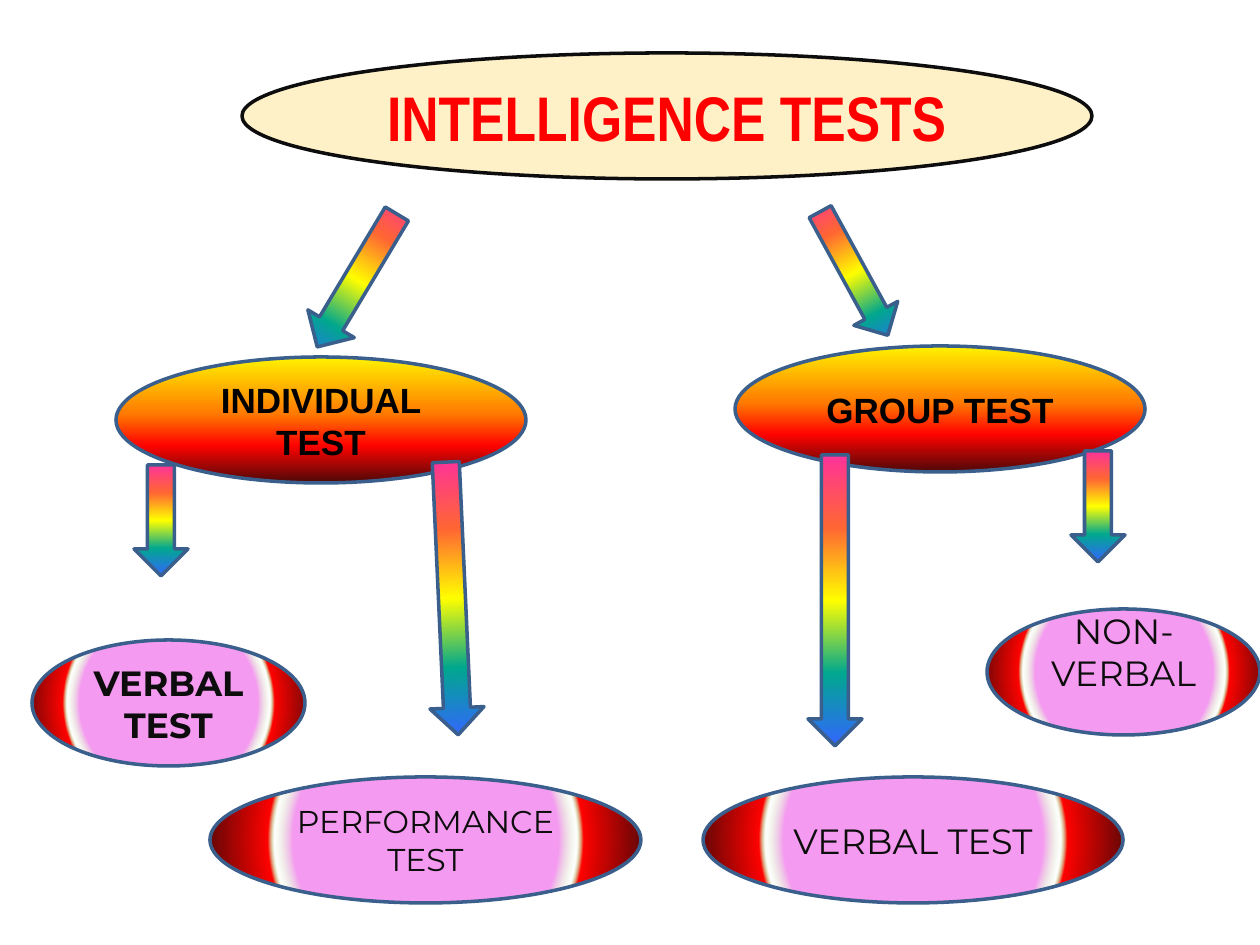
from lxml.etree import SubElement
from pptx import Presentation
from pptx.dml.color import RGBColor
from pptx.enum.shapes import MSO_SHAPE
from pptx.enum.text import MSO_ANCHOR, MSO_AUTO_SIZE, PP_ALIGN
from pptx.oxml.ns import qn
from pptx.util import Emu, Pt

SCALE = 914400 / 126  # EMU per px

CREAM = RGBColor(0xFF, 0xC0, 0x00)
RED = RGBColor(0xFF, 0x00, 0x00)
BLACK = RGBColor(0x00, 0x00, 0x00)
INK = RGBColor(0x0D, 0x0D, 0x0D)
OUTLINE = RGBColor(0x3A, 0x5F, 0x8C)
YELLOW = RGBColor(0xFF, 0xF2, 0x00)
ORANGE = RGBColor(0xFF, 0x7A, 0x00)
SCARLET = RGBColor(0xFF, 0x03, 0x00)
MAROON = RGBColor(0x4D, 0x08, 0x08)
ORCHID = RGBColor(0xE9, 0x17, 0xDF)
LIME = RGBColor(0x92, 0xD0, 0x50)

# Gradient stops: position %, colour, opacity %
FIRE = [(0, YELLOW, 100), (45, ORANGE, 100), (70, SCARLET, 100), (100, MAROON, 100)]
PETAL = [(59, ORCHID, 43), (59, ORCHID, 43), (67, LIME, 0),
         (70, SCARLET, 100), (100, MAROON, 100)]
RAINBOW = [(0, RGBColor(0xFF, 0x33, 0x99), 100), (25, RGBColor(0xFF, 0x66, 0x33), 100),
           (50, RGBColor(0xFF, 0xFF, 0x00), 100), (75, RGBColor(0x01, 0xA7, 0x8F), 100),
           (100, RGBColor(0x33, 0x66, 0xFF), 100)]


def px(n):
    return Emu(round(n * SCALE))


def set_opacity(color_el, percent):
    if percent < 100:
        SubElement(color_el, qn("a:alpha"), val=str(percent * 1000))


def set_gradient(sp, stops, radial=False):
    sp.fill.gradient()
    grad = sp._element.spPr.find(qn("a:gradFill"))
    for child in list(grad):
        grad.remove(child)
    grad.set("rotWithShape", "1")
    gs_list = SubElement(grad, qn("a:gsLst"))
    for pos, color, opacity in stops:
        gs = SubElement(gs_list, qn("a:gs"), pos=str(pos * 1000))
        set_opacity(SubElement(gs, qn("a:srgbClr"), val=str(color)), opacity)
    if radial:
        route = SubElement(grad, qn("a:path"), {"path": "circle"})
        SubElement(route, qn("a:fillToRect"), {side: "50000" for side in "ltrb"})
    else:
        SubElement(grad, qn("a:lin"), ang="5400000", scaled="0")


def set_text(sp, text, font="Montserrat", size=20, color=INK, bold=False, lift=0):
    """Centre text in a shape; lift moves it up by that many px."""
    tf = sp.text_frame
    tf.word_wrap = True
    tf.auto_size = MSO_AUTO_SIZE.NONE
    tf.vertical_anchor = MSO_ANCHOR.MIDDLE
    tf.margin_bottom = px(6 + 2 * lift)
    p = tf.paragraphs[0]
    p.alignment = PP_ALIGN.CENTER
    r = p.add_run()
    r.text = text
    r.font.name = font
    r.font.size = Pt(size)
    r.font.bold = bold
    r.font.color.rgb = color


class Diagram:
    line_width = Pt(2)
    height = 126  # every ellipse, px

    def __init__(self, slide):
        self.s = slide

    def shape(self, kind, x, y, w, h, line=OUTLINE):
        sp = self.s.shapes.add_shape(kind, px(x), px(y), px(w), px(h))
        sp.shadow.inherit = False
        sp.line.color.rgb = line
        sp.line.width = self.line_width
        return sp

    def title(self, text, x, y, w):
        oval = self.shape(MSO_SHAPE.OVAL, x, y, w, self.height, line=INK)
        oval.fill.solid()
        oval.fill.fore_color.rgb = CREAM
        set_opacity(oval._element.spPr.find(qn("a:solidFill"))[0], 22)
        # Bring the title text in front of its oval
        sp = self.s.shapes.title
        oval._element.addnext(sp._element)
        sp.left, sp.top, sp.width, sp.height = px(x), px(y), px(w), px(self.height)
        set_text(sp, text, font="Arial Narrow", size=36, color=RED, bold=True)

    def oval(self, text, x, y, w, stops, radial=False, **fmt):
        sp = self.shape(MSO_SHAPE.OVAL, x, y, w, self.height)
        set_gradient(sp, stops, radial)
        set_text(sp, text, **fmt)

    def arrow(self, x, y, w, h, rotation=0):
        sp = self.shape(MSO_SHAPE.DOWN_ARROW, x, y, w, h)
        sp.rotation = rotation
        set_gradient(sp, RAINBOW)


def main():
    prs = Presentation()
    prs.slide_width, prs.slide_height = px(1260), px(945)
    d = Diagram(prs.slides.add_slide(prs.slide_layouts[5]))

    d.title("INTELLIGENCE TESTS", 242, 53, 850)

    # Two families of tests
    for text, x, y in [("INDIVIDUAL TEST", 116, 357), ("GROUP TEST", 735, 346)]:
        d.oval(text, x, y, 410, FIRE, font="Arial", color=BLACK, bold=True)

    # Arrows from the title, then from each family
    for box in [(330, 203, 54, 155, 30.9), (829, 203, 50, 141, 331.3),
                (134, 465, 54, 111), (425, 462, 54, 273, 357.4),
                (808, 455, 54, 291), (1071, 451, 54, 111)]:
        d.arrow(*box)

    # Kinds of test
    for text, x, y, w, fmt in [("VERBAL TEST", 32, 640, 273, {"bold": True}),
                               ("PERFORMANCE TEST", 210, 777, 431, {"size": 18}),
                               ("VERBAL TEST", 703, 777, 420, {}),
                               ("NON-VERBAL", 987, 609, 273, {"lift": 21})]:
        d.oval(text, x, y, w, PETAL, radial=True, **fmt)

    prs.save("out.pptx")


if __name__ == "__main__":
    main()
